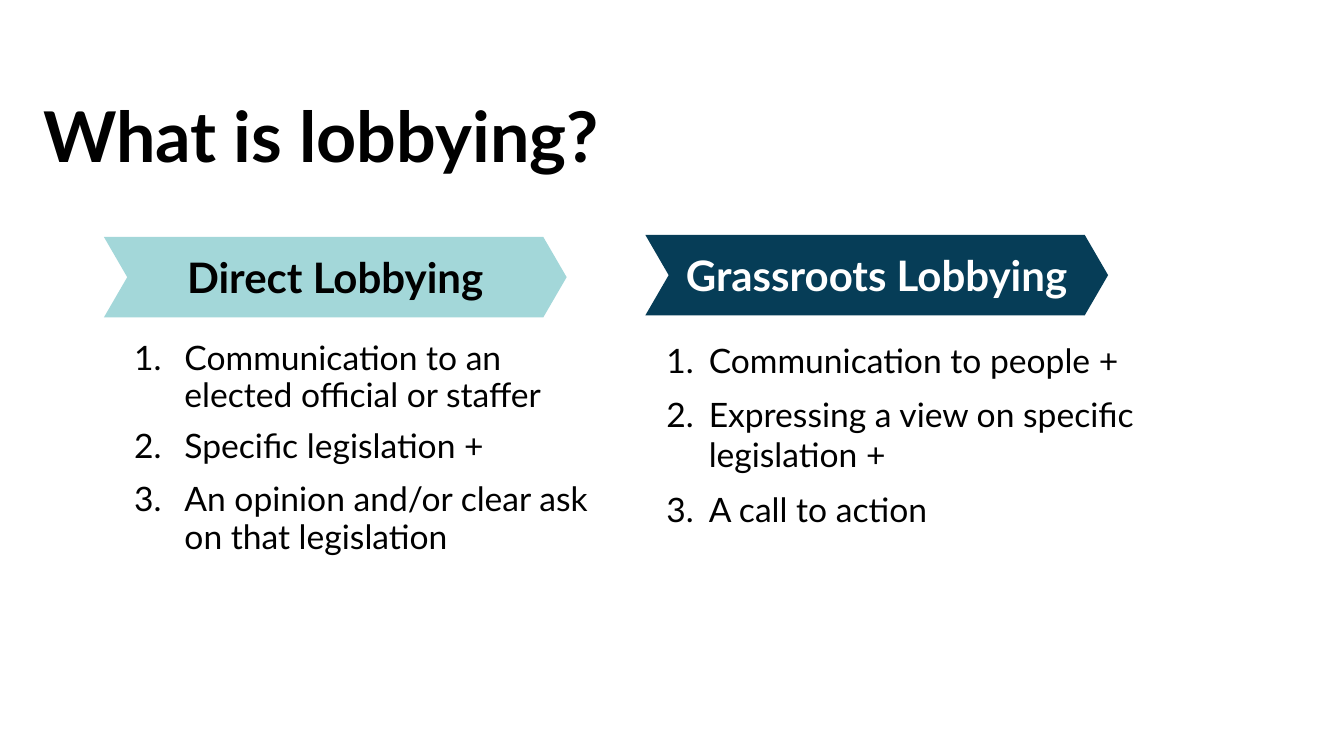
from dataclasses import dataclass

from lxml import etree
from pptx import Presentation
from pptx.dml.color import RGBColor
from pptx.enum.shapes import MSO_SHAPE
from pptx.enum.text import MSO_ANCHOR, PP_ALIGN
from pptx.oxml.ns import qn
from pptx.util import Emu, Pt

CHEVRON = MSO_SHAPE.CHEVRON
MIDDLE = MSO_ANCHOR.MIDDLE
TOP = MSO_ANCHOR.TOP
CENTER = PP_ALIGN.CENTER
LEFT = PP_ALIGN.LEFT


@dataclass(frozen=True)
class Theme:
    font: str = "Lato"
    black: str = "000000"
    white: str = "FFFFFF"
    aqua: str = "A3D7D9"
    navy: str = "063D57"
    title_size: int = 50
    heading_size: int = 30
    list_size: int = 24
    list_gap: int = 10


THEME = Theme()
TITLE = "What is lobbying?"
COLUMNS = [
    {
        "heading": "Direct Lobbying",
        "fill": THEME.aqua,
        "color": THEME.black,
        "banner_at": (103, 235),
        "list_box": (103, 326, 514, 249),
        "indent": (67, 50),
        "items": [
            ("Communication to an elected official or staffer", 0.9),
            ("Specific legislation +", 0.95),
            ("An opinion and/or clear ask on that legislation", 0.95),
        ],
    },
    {
        "heading": "Grassroots Lobbying",
        "fill": THEME.navy,
        "color": THEME.white,
        "banner_at": (640, 233),
        "list_box": (640, 324, 504, 217),
        "indent": (50, 42),
        "items": [
            ("Communication to people +", 1.0),
            ("Expressing a view on specific legislation +", 1.0),
            ("A call to action", 1.0),
        ],
    },
]

PAGE_SIZE = (1333, 750)
TITLE_BOX = (33, 82, 1214, 104)
BANNER_SIZE = (459, 80)
CHEVRON_POINT = 0.29
TITLE_INSET = 10
COLUMN_INSET = 13


def px(length):
    """Turn a length in px, 100 to the inch, into EMU."""
    return Emu(length * 9144)


def prepare_frame(shape, inset, anchor=TOP):
    frame = shape.text_frame
    frame.word_wrap = True
    frame.vertical_anchor = anchor
    frame.margin_left = frame.margin_right = px(inset)
    frame.margin_top = frame.margin_bottom = px(inset)
    return frame


def style(para, size, color, bold=False, align=LEFT):
    para.alignment = align
    font = para.font
    font.name = THEME.font
    font.size = Pt(size)
    font.bold = bold
    font.color.rgb = RGBColor.from_string(color)


def number(para, indent):
    """Give a paragraph an automatic number with a hanging indent."""
    margin, hanging = indent
    properties = para._p.get_or_add_pPr()
    properties.set("marL", str(px(margin)))
    properties.set("indent", str(-px(hanging)))
    bullet_color = etree.SubElement(properties, qn("a:buClr"))
    etree.SubElement(bullet_color, qn("a:srgbClr"), val=THEME.black)
    etree.SubElement(properties, qn("a:buAutoNum"), type="arabicPeriod")


def add_title(page):
    box = page.shapes.add_textbox(*map(px, TITLE_BOX))
    para = prepare_frame(box, TITLE_INSET).paragraphs[0]
    para.text = TITLE
    style(para, THEME.title_size, THEME.black, bold=True)


def add_banner(page, column):
    banner = page.shapes.add_shape(CHEVRON, *map(px, column["banner_at"] + BANNER_SIZE))
    banner.adjustments[0] = CHEVRON_POINT
    banner.shadow.inherit = False
    banner.fill.solid()
    banner.fill.fore_color.rgb = RGBColor.from_string(column["fill"])
    banner.line.fill.background()
    para = prepare_frame(banner, COLUMN_INSET, MIDDLE).paragraphs[0]
    para.text = column["heading"]
    style(para, THEME.heading_size, column["color"], bold=True, align=CENTER)


def add_list(page, column):
    box = page.shapes.add_textbox(*map(px, column["list_box"]))
    frame = prepare_frame(box, COLUMN_INSET)
    for index, (text, spacing) in enumerate(column["items"]):
        para = frame.add_paragraph() if index else frame.paragraphs[0]
        para.text = text
        para.line_spacing = spacing
        para.space_before = Pt(THEME.list_gap if index else 0)
        number(para, column["indent"])
        style(para, THEME.list_size, THEME.black)


def main():
    deck = Presentation()
    deck.slide_width, deck.slide_height = map(px, PAGE_SIZE)
    page = deck.slides.add_slide(deck.slide_layouts[6])
    add_title(page)
    for column in COLUMNS:
        add_banner(page, column)
        add_list(page, column)
    deck.save("out.pptx")


if __name__ == "__main__":
    main()
